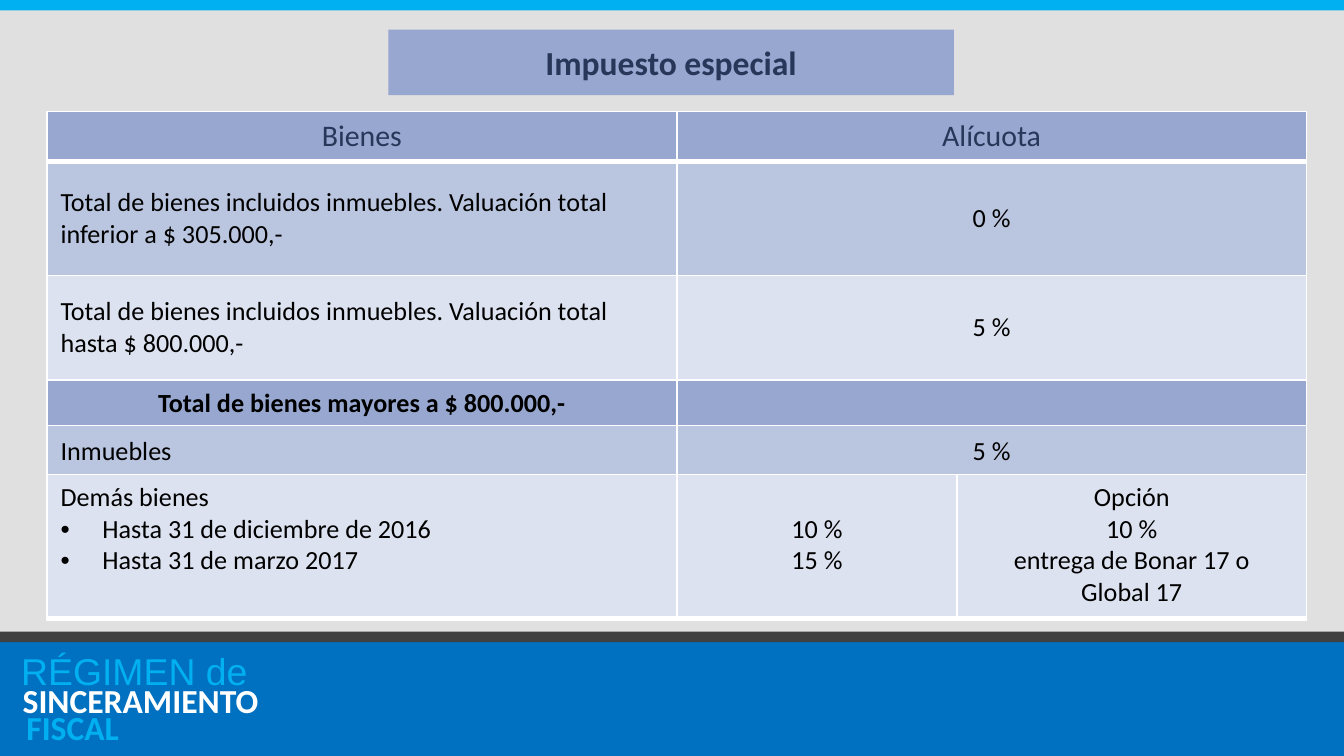
from dataclasses import dataclass

from lxml.etree import SubElement
from pptx import Presentation
from pptx.dml.color import RGBColor
from pptx.enum.shapes import MSO_SHAPE as Shape
from pptx.enum.text import MSO_ANCHOR as Anchor, PP_ALIGN as Align
from pptx.oxml.ns import qn
from pptx.util import Cm, Pt


@dataclass(frozen=True)
class Theme:
    backdrop: str = "D9D9D9"
    footer: str = "0070C0"
    strip: str = "404040"
    accent: str = "00B0F0"
    white: str = "FFFFFF"
    black: str = "000000"
    navy: str = "283659"
    header: str = "97A7D0"
    band: str = "BAC5DF"
    pale: str = "DCE2EF"
    font: str = "Calibri"
    brand_font: str = "Arial"
    brand_size: int = 20
    title_size: int = 18
    header_size: int = 16
    body_size: int = 14


THEME = Theme()


@dataclass(frozen=True)
class Box:
    left: float
    top: float
    width: float
    height: float

    def emu(self) -> tuple:
        return Cm(self.left), Cm(self.top), Cm(self.width), Cm(self.height)


@dataclass(frozen=True)
class Style:
    size: int = THEME.body_size
    color: str = THEME.black
    bold: bool = False
    font: str = THEME.font


@dataclass(frozen=True)
class Entry:
    lines: tuple
    fill: str
    style: Style = Style()
    align: Align = Align.CENTER
    anchor: Anchor = Anchor.MIDDLE
    bulleted_from: int = 99
    margin_top: float = 0.13


def add_line(paragraph, text: str, style: Style, align: Align = Align.LEFT) -> None:
    paragraph.alignment = align
    run = paragraph.add_run()
    run.text = text
    run.font.name = style.font
    run.font.size = Pt(style.size)
    run.font.bold = style.bold
    run.font.color.rgb = RGBColor.from_string(style.color)


def add_bullet(paragraph) -> None:
    properties = paragraph._p.get_or_add_pPr()
    properties.set("marL", str(Cm(0.79)))
    properties.set("indent", str(Cm(-0.79)))
    SubElement(properties, qn("a:buFont"), typeface="Arial")
    SubElement(properties, qn("a:buChar"), char="•")


def add_panel(slide, box: Box, color: str, opacity: int = 100):
    panel = slide.shapes.add_shape(Shape.RECTANGLE, *box.emu())
    panel.shadow.inherit = False
    panel.fill.solid()
    panel.fill.fore_color.rgb = RGBColor.from_string(color)
    panel.line.fill.background()
    if opacity < 100:
        solid_color = panel._element.spPr.find(qn("a:solidFill"))[0]
        SubElement(solid_color, qn("a:alpha"), val=str(opacity * 1000))
    return panel


def add_label(slide, box: Box, text: str, style: Style) -> None:
    frame = slide.shapes.add_textbox(*box.emu()).text_frame
    frame.word_wrap = True
    add_line(frame.paragraphs[0], text, style)


def add_borders(cell, bottom: int) -> None:
    properties = cell._tc.get_or_add_tcPr()
    for side, points in (("lnL", 1), ("lnR", 1), ("lnT", 1), ("lnB", bottom)):
        border = SubElement(properties, qn(f"a:{side}"), w=str(Pt(points)))
        solid = SubElement(border, qn("a:solidFill"))
        SubElement(solid, qn("a:srgbClr"), val=THEME.white)


def fill_cell(cell, entry: Entry, bottom: int) -> None:
    add_borders(cell, bottom)
    cell.fill.solid()
    cell.fill.fore_color.rgb = RGBColor.from_string(entry.fill)
    cell.vertical_anchor = entry.anchor
    cell.margin_top = Cm(entry.margin_top)
    cell.margin_bottom = Cm(0.13 if entry.lines else 0)
    frame = cell.text_frame
    for index, text in enumerate(entry.lines):
        paragraph = frame.add_paragraph() if index else frame.paragraphs[0]
        if index >= entry.bulleted_from:
            add_bullet(paragraph)
        add_line(paragraph, text, entry.style, entry.align)


def add_grid(slide, left: float, top: float, widths: tuple, heights: tuple,
             rows: tuple, thick_row: int = 0) -> None:
    box = Box(left, top, sum(widths), sum(heights))
    table = slide.shapes.add_table(len(rows), len(widths), *box.emu()).table
    table.first_row = table.horz_banding = False
    for column, width in zip(table.columns, widths):
        column.width = Cm(width)
    for index, (row, height, entries) in enumerate(zip(table.rows, heights, rows)):
        row.height = Cm(height)
        for cell, entry in zip(row.cells, entries):
            fill_cell(cell, entry, 3 if index == thick_row else 1)


def rate_row(goods: str, rate: str, fill: str) -> tuple:
    return Entry((goods,), fill, align=Align.LEFT), Entry((rate,), fill)


def main() -> None:
    deck = Presentation()
    deck.slide_width, deck.slide_height = Cm(25.4), Cm(14.29)
    slide = deck.slides.add_slide(deck.slide_layouts[6])

    # Background and footer
    add_panel(slide, Box(-0.05, 0, 25.45, 14.29), THEME.backdrop, opacity=80)
    add_panel(slide, Box(-0.08, 12.14, 25.48, 2.15), THEME.footer)
    add_panel(slide, Box(-0.05, 11.94, 25.45, 0.2), THEME.strip)
    add_panel(slide, Box(-0.05, 0, 25.45, 0.2), THEME.accent)

    # Programme name
    add_label(slide, Box(0.15, 12.12, 11.3, 1.12), "RÉGIMEN de",
              Style(THEME.brand_size, THEME.accent, font=THEME.brand_font))
    add_label(slide, Box(0.18, 12.73, 11.05, 1.02), "SINCERAMIENTO",
              Style(THEME.title_size, THEME.white, bold=True))
    add_label(slide, Box(0.25, 13.23, 4.55, 1.02), "FISCAL",
              Style(THEME.title_size, THEME.accent, bold=True))

    # Rates by total value
    heading = Style(THEME.header_size, THEME.navy)
    total = "Total de bienes incluidos inmuebles. Valuación total"
    add_grid(slide, 0.89, 2.11, (11.9, 11.9), (0.87, 2.16, 1.98, 0.84, 0.97), (
        tuple(Entry((text,), THEME.header, heading, anchor=Anchor.TOP)
              for text in ("Bienes", "Alícuota")),
        rate_row(f"{total} inferior a $ 305.000,-", "0 %", THEME.band),
        rate_row(f"{total} hasta $ 800.000,-", "5 %", THEME.pale),
        (Entry(("Total de bienes mayores a $ 800.000,-",), THEME.header,
               Style(bold=True), anchor=Anchor.TOP),
         Entry((), THEME.header, margin_top=0)),
        rate_row("Inmuebles", "5 %", THEME.band),
    ))

    # Rates for other goods, with the first rate level with the first date
    add_grid(slide, 0.89, 8.97, (11.9, 5.3, 6.6), (2.72,), ((
        Entry(("Demás bienes", "Hasta 31 de diciembre de 2016",
               "Hasta 31 de marzo 2017"), THEME.pale, align=Align.LEFT,
              anchor=Anchor.TOP, bulleted_from=1),
        Entry(("10 %", "15 %"), THEME.pale, anchor=Anchor.TOP, margin_top=0.73),
        Entry(("Opción", "10 %", "entrega de Bonar 17 o", "Global 17"),
              THEME.pale, anchor=Anchor.TOP),
    ),))

    # Title
    title = add_panel(slide, Box(7.34, 0.56, 10.69, 1.24), THEME.header).text_frame
    title.vertical_anchor = Anchor.MIDDLE
    add_line(title.paragraphs[0], "Impuesto especial",
             Style(THEME.title_size, THEME.navy, bold=True), Align.CENTER)

    deck.save("out.pptx")


if __name__ == "__main__":
    main()
